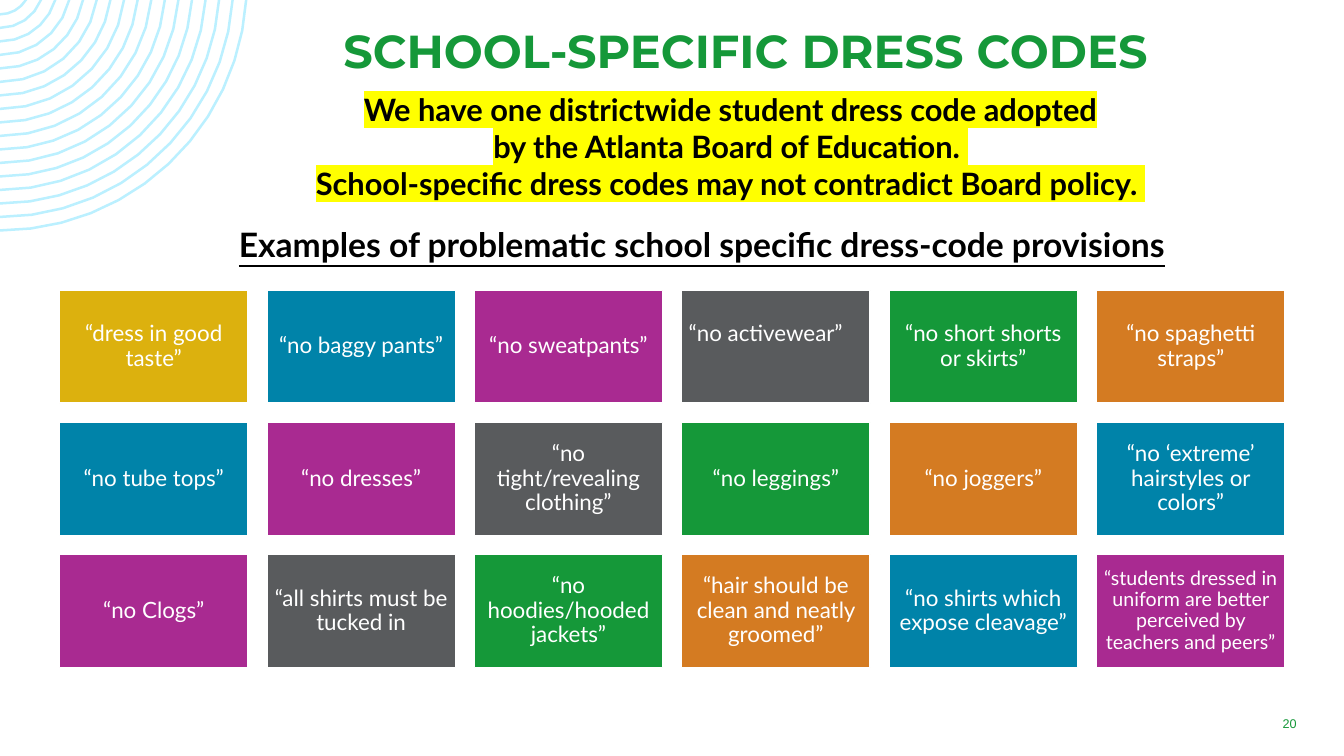
from dataclasses import dataclass
from math import asin, cos, pi, sin

from lxml.etree import Element
from pptx import Presentation
from pptx.dml.color import RGBColor
from pptx.enum.shapes import MSO_SHAPE as Shape
from pptx.enum.text import MSO_ANCHOR as Anchor, MSO_AUTO_SIZE as AutoSize, PP_ALIGN as Align
from pptx.oxml.ns import qn
from pptx.util import Inches, Pt


@dataclass(frozen=True)
class Theme:
    green: str = "159839"
    gold: str = "DCB10E"
    blue: str = "0083A9"
    purple: str = "A92A91"
    gray: str = "595B5D"
    orange: str = "D47B22"
    rings: str = "BBF0FF"
    yellow: str = "FFFF00"
    white: str = "FFFFFF"
    black: str = "000000"
    title_font: str = "Montserrat"
    body_font: str = "Lato"
    number_font: str = "Arial"
    title_size: float = 33
    heading_size: float = 24
    policy_size: float = 22
    card_size: float = 16
    long_card_size: float = 14
    number_size: float = 9


THEME = Theme()

POLICY = [
    "We have one districtwide student dress code adopted",
    "by the Atlanta Board of Education. ",
    "School-specific dress codes may not contradict Board policy. ",
]
PROVISIONS = [
    "“dress in good taste”", "“no baggy pants”", "“no sweatpants”",
    "“no activewear”", "“no short shorts or skirts”", "“no spaghetti straps”",
    "“no tube tops”", "“no dresses”", "“no tight/revealing clothing”",
    "“no leggings”", "“no joggers”", "“no ‘extreme’ hairstyles or colors”",
    "“no Clogs”", "“all shirts must be tucked in", "“no hoodies/hooded jackets”",
    "“hair should be clean and neatly groomed”", "“no shirts which expose cleavage”",
    "“students dressed in uniform are better perceived by teachers and peers”",
]
CARD_CYCLE = [THEME.blue, THEME.purple, THEME.gray, THEME.green, THEME.orange]
COLUMNS = 6


def rgb(color):
    return RGBColor.from_string(color)


def highlight(r, color):
    mark = Element(qn("a:highlight"))
    value = Element(qn("a:srgbClr"))
    value.set("val", color)
    mark.append(value)
    r._r.get_or_add_rPr().find(qn("a:solidFill")).addnext(mark)


def write(tf, *lines, size, font=THEME.body_font, color=THEME.black, bold=False,
          underline=False, marker=None, align=Align.CENTER, anchor=Anchor.TOP, spacing=None):
    """Fill a text frame with one paragraph per line."""
    tf.word_wrap = True
    tf.auto_size = AutoSize.NONE
    tf.vertical_anchor = anchor
    for i, line in enumerate(lines):
        p = tf.add_paragraph() if i else tf.paragraphs[0]
        p.alignment = align
        p.line_spacing = spacing
        r = p.add_run()
        r.text = line
        r.font.size = Pt(size)
        r.font.name = font
        r.font.bold = bold
        r.font.underline = underline
        r.font.color.rgb = rgb(color)
        if marker:
            highlight(r, marker)


def add_text(s, left, top, width, height, *lines, **style):
    box = s.shapes.add_textbox(Inches(left), Inches(top), Inches(width), Inches(height))
    write(box.text_frame, *lines, **style)


def add_title(s, text):
    title = s.shapes.title
    title.left, title.top = Inches(1.56), Inches(0.17)
    title.width, title.height = Inches(11.67), Inches(0.84)
    write(title.text_frame, text, size=THEME.title_size, font=THEME.title_font,
          color=THEME.green, bold=True)


def arc(radius, center_y, steps):
    """Points from the top edge of the slide down to its left edge."""
    start = asin(-center_y / radius)
    angles = [start + (pi / 2 - start) * i / steps for i in range(steps + 1)]
    return [(Inches(radius * cos(a)), Inches(center_y + radius * sin(a))) for a in angles]


def add_rings(s, count=17, center_y=-0.16, inner=0.29, step=0.134, thickness=0.025):
    builder = s.shapes.build_freeform(0, 0)
    for i in range(count):
        radius = inner + i * step
        steps = 4 + i // 2
        outline = (arc(radius + thickness, center_y, steps)
                   + arc(radius, center_y, steps)[::-1])
        builder.move_to(*outline[0])
        builder.add_line_segments(outline[1:], close=True)
    rings = builder.convert_to_shape()
    rings.shadow.inherit = False
    rings.fill.solid()
    rings.fill.fore_color.rgb = rgb(THEME.rings)
    rings.line.fill.background()


def add_card(s, left, top, width, height, text, fill, size=THEME.card_size,
             align=Align.CENTER, lift=0):
    """Draw a provision card; lift raises the text by extra space below it."""
    card = s.shapes.add_shape(Shape.RECTANGLE, Inches(left), Inches(top),
                              Inches(width), Inches(height))
    card.shadow.inherit = False
    card.fill.solid()
    card.fill.fore_color.rgb = rgb(fill)
    card.line.color.rgb = rgb(THEME.white)
    card.line.width = Pt(1)
    tf = card.text_frame
    inset = 0.07 if size == THEME.card_size else 0.06
    tf.margin_left = tf.margin_right = tf.margin_top = Inches(inset)
    tf.margin_bottom = Inches(inset + lift)
    write(tf, text, size=size, color=THEME.white, align=align,
          anchor=Anchor.MIDDLE, spacing=0.9)


def add_cards(s, left=0.59, top=2.88, width=1.87, height=1.12):
    special = {
        3: dict(align=Align.LEFT, lift=0.24),
        len(PROVISIONS) - 1: dict(size=THEME.long_card_size),
    }
    for i, text in enumerate(PROVISIONS):
        row, column = divmod(i, COLUMNS)
        fill = CARD_CYCLE[(i - 1) % len(CARD_CYCLE)] if i else THEME.gold
        add_card(s, left + column * width * 1.1, top + row * 1.31, width, height,
                 text, fill, **special.get(i, {}))


def main():
    prs = Presentation()
    prs.slide_width, prs.slide_height = Inches(13.33), Inches(7.5)
    s = prs.slides.add_slide(prs.slide_layouts[5])
    add_rings(s)
    add_title(s, "SCHOOL-SPECIFIC DRESS CODES")
    add_text(s, 12.25, 7.03, 1.08, 0.3, "20", size=THEME.number_size,
             font=THEME.number_font, color=THEME.green, anchor=Anchor.MIDDLE)
    add_cards(s)
    add_text(s, 1.7, 0.85, 11.09, 1.21, *POLICY, size=THEME.policy_size,
             bold=True, marker=THEME.yellow)
    add_text(s, 0.88, 2.17, 12.16, 0.5,
             "Examples of problematic school specific dress-code provisions",
             size=THEME.heading_size, bold=True, underline=True)
    prs.save("out.pptx")


if __name__ == "__main__":
    main()
